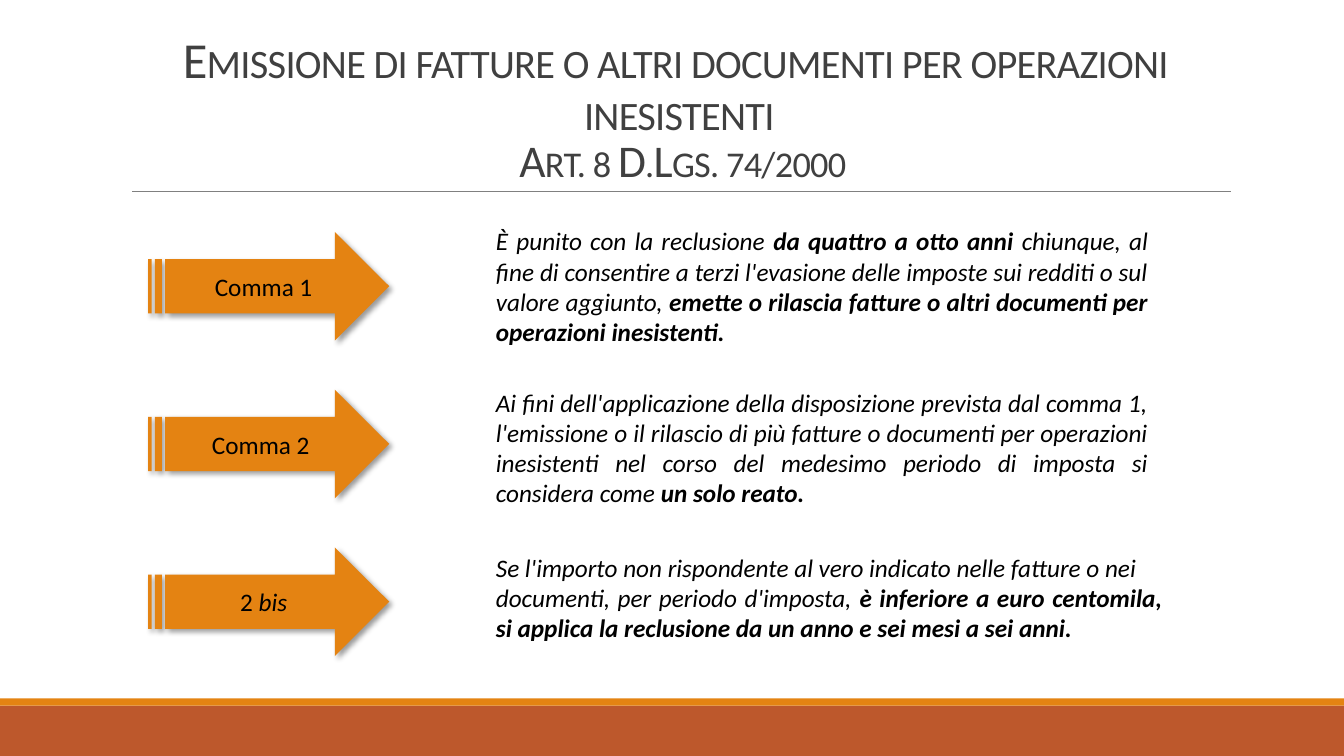
from lxml import etree
from pptx import Presentation
from pptx import util as u
from pptx.dml.color import RGBColor
from pptx.enum import shapes, text
from pptx.oxml.ns import qn

COLORS = {"band": "BD582C", "accent": "E48312", "rule": "808080",
          "title": "404040", "body": "000000"}
COLS, ROWS = 160, 90


class Deck:
    font = "Calibri"
    body_size = 18

    def __init__(self):
        self.prs = Presentation()
        self.prs.slide_width = u.Inches(13.33)
        self.prs.slide_height = u.Inches(7.5)
        self.s = self.prs.slides.add_slide(self.prs.slide_layouts[6])

    def x(self, cols):
        return round(self.prs.slide_width * cols / COLS)

    def y(self, rows):
        return round(self.prs.slide_height * rows / ROWS)

    def box(self, left, top, width, height):
        return self.x(left), self.y(top), self.x(width), self.y(height)

    def rgb(self, name):
        return RGBColor.from_string(COLORS[name])

    def style(self, r, size, color, bold=False, italic=False):
        f = r.font
        f.name, f.size, f.bold, f.italic = self.font, u.Pt(size), bold, italic
        f.color.rgb = self.rgb(color)

    def fill_paragraph(self, p, runs, align):
        p.alignment = align
        for words, look in runs:
            r = p.add_run()
            r.text = words
            self.style(r, self.body_size, "body", "b" in look, "i" in look)

    def shape(self, kind, grid, color):
        sp = self.s.shapes.add_shape(kind, *self.box(*grid))
        sp.shadow.inherit = False
        sp.fill.solid()
        sp.fill.fore_color.rgb = self.rgb(color)
        sp.line.fill.background()
        return sp

    def rule(self, left, right, row):
        c = self.s.shapes.add_connector(
            shapes.MSO_CONNECTOR.STRAIGHT,
            self.x(left), self.y(row), self.x(right), self.y(row))
        c.line.color.rgb = self.rgb("rule")
        c.line.width = u.Pt(0.5)
        etree.SubElement(c._element.spPr, qn("a:effectLst"))

    def title(self, grid, words, sizes):
        tf = self.s.shapes.add_textbox(*self.box(*grid)).text_frame
        tf.word_wrap = True
        tf.vertical_anchor = text.MSO_ANCHOR.BOTTOM
        p = tf.paragraphs[0]
        p.text = words
        p.alignment = text.PP_ALIGN.CENTER
        p.line_spacing = 0.85
        for r, size in zip(p.runs, sizes):
            self.style(r, size, "title")
            rpr = r.font._element
            rpr.set("cap", "small")
            rpr.set("spc", "-50")

    def arrow(self, grid, runs):
        sp = self.shape(shapes.MSO_SHAPE.STRIPED_RIGHT_ARROW, grid, "accent")
        effects = sp._element.spPr.find(qn("a:effectLst"))
        shadow = etree.SubElement(
            effects, qn("a:outerShdw"), blurRad=str(u.Pt(4)), dist=str(u.Pt(3)),
            dir=str(45 * 60000), algn="tl", rotWithShape="0")
        color = etree.SubElement(shadow, qn("a:srgbClr"), val=COLORS["body"])
        etree.SubElement(color, qn("a:alpha"), val="40000")
        tf = sp.text_frame
        tf.vertical_anchor = text.MSO_ANCHOR.MIDDLE
        self.fill_paragraph(tf.paragraphs[0], runs, text.PP_ALIGN.CENTER)

    def body(self, grid, paragraphs):
        tf = self.s.shapes.add_textbox(*self.box(*grid)).text_frame
        tf.word_wrap = True
        tf.auto_size = text.MSO_AUTO_SIZE.SHAPE_TO_FIT_TEXT
        for i, runs in enumerate(paragraphs):
            p = tf.add_paragraph() if i else tf.paragraphs[0]
            self.fill_paragraph(p, runs, text.PP_ALIGN.JUSTIFY)


COMMAS = [
    ([("Comma 1", "")], (26.28, 80, 15.72), [[
        ("È punito con la reclusione ", "i"),
        ("da quattro a otto anni ", "bi"),
        ("chiunque, al fine di consentire a terzi l'evasione delle imposte "
         "sui redditi o sul valore aggiunto, ", "i"),
        ("emette o rilascia fatture o altri documenti per operazioni "
         "inesistenti.", "bi")]]),
    ([("Comma 2 ", "")], (45.48, 80, 15.72), [[
        ("Ai fini dell'applicazione della disposizione prevista dal comma 1, "
         "l'emissione o il rilascio di più fatture o documenti per operazioni "
         "inesistenti nel corso del medesimo periodo di imposta si considera "
         "come ", "i"),
        ("un solo reato.", "bi")]]),
    ([("2 ", ""), ("bis", "i")], (65.16, 81.7, 12.12), [
        [("Se l'importo non rispondente al vero indicato nelle fatture o nei",
          "i")],
        [("documenti, per periodo d'imposta, ", "i"),
         ("è inferiore a euro centomila, si applica la reclusione da un anno "
          "e sei mesi a sei anni. ", "bi")]]),
]


def main():
    deck = Deck()
    rect = shapes.MSO_SHAPE.RECTANGLE
    deck.shape(rect, (0, 84, COLS, 6), "band")
    deck.shape(rect, (0, 83.16, COLS, 0.84), "accent")
    deck.rule(15.72, 146.55, 22.8)
    deck.title((14.4, 3.72, 132, 19.08),
               "Emissione di fatture o altri documenti per operazioni "
               "inesistenti\vArt. 8 D.Lgs. 74/2000", (36, 32.4))
    for i, (label, (top, width, height), paragraphs) in enumerate(COMMAS):
        deck.arrow((17.64, 27.6 + 18.78 * i, 28.7, 12.96), label)
        deck.body((57.85, top, width, height), paragraphs)
    deck.prs.save("out.pptx")


if __name__ == "__main__":
    main()
